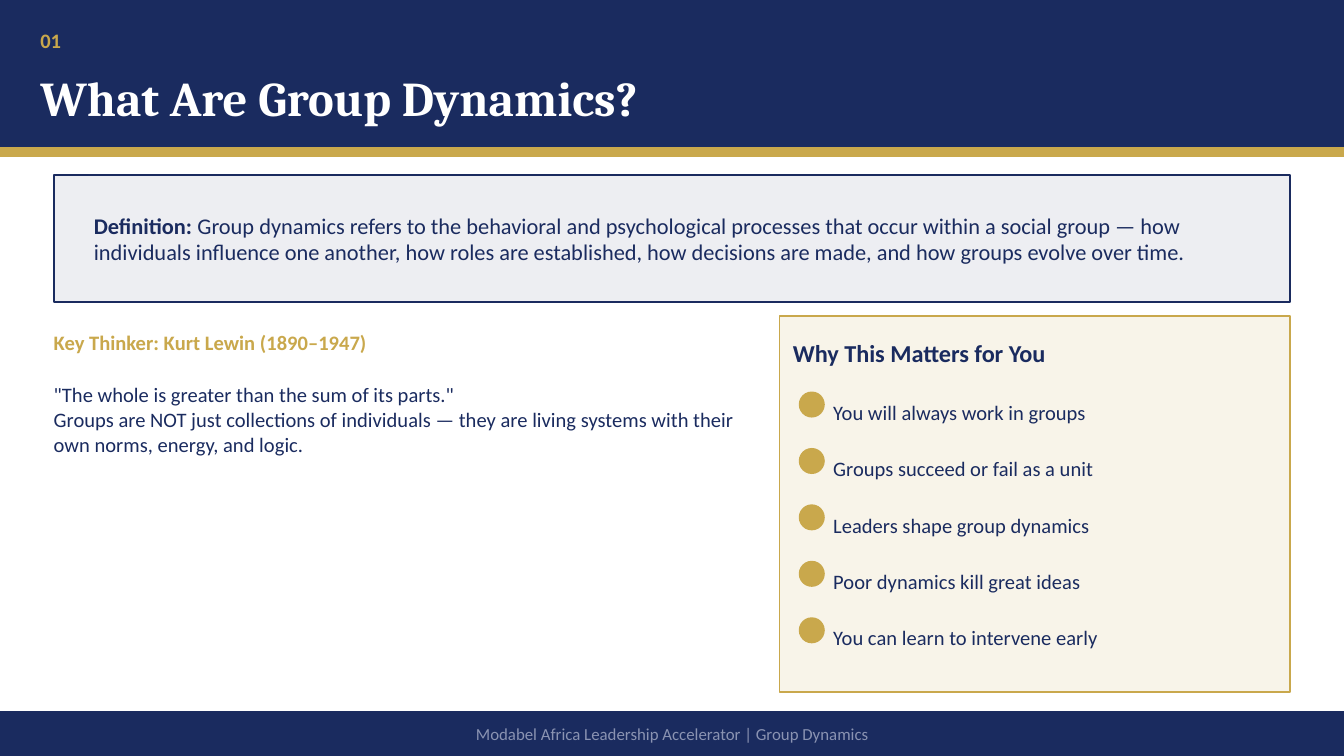
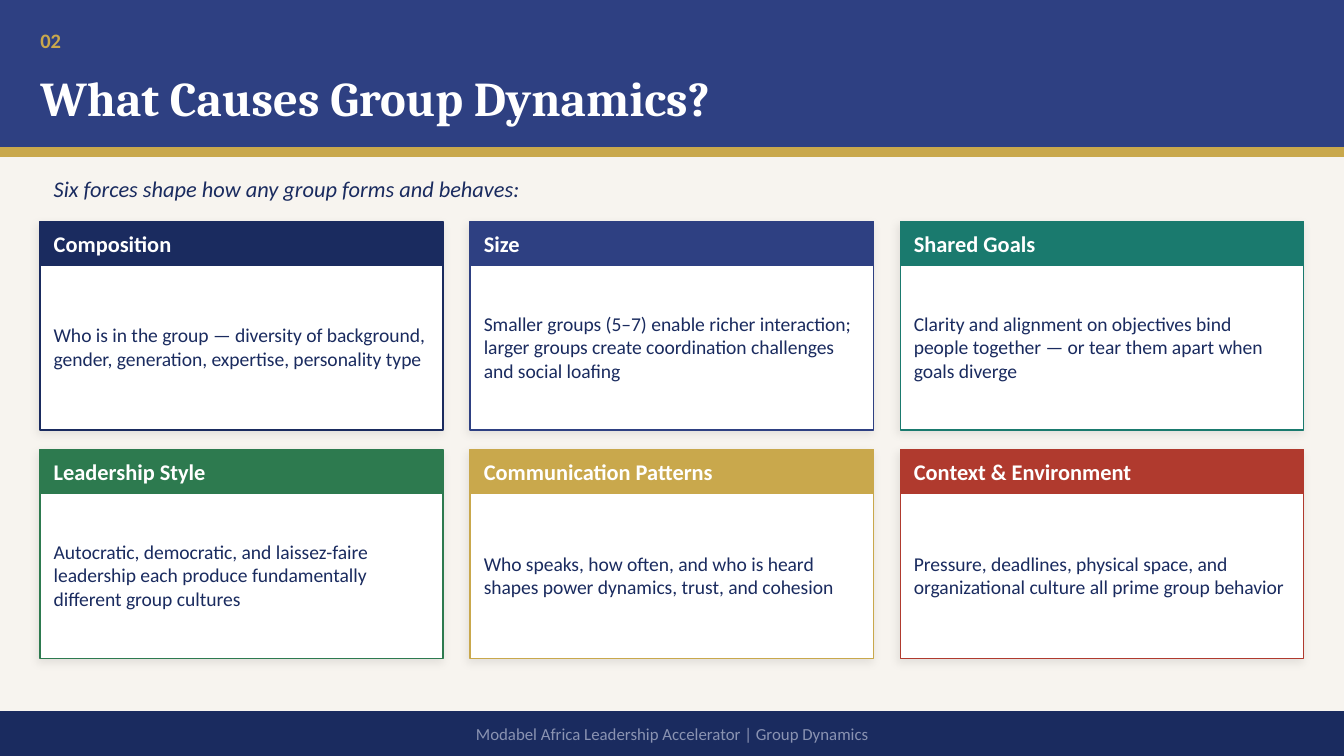
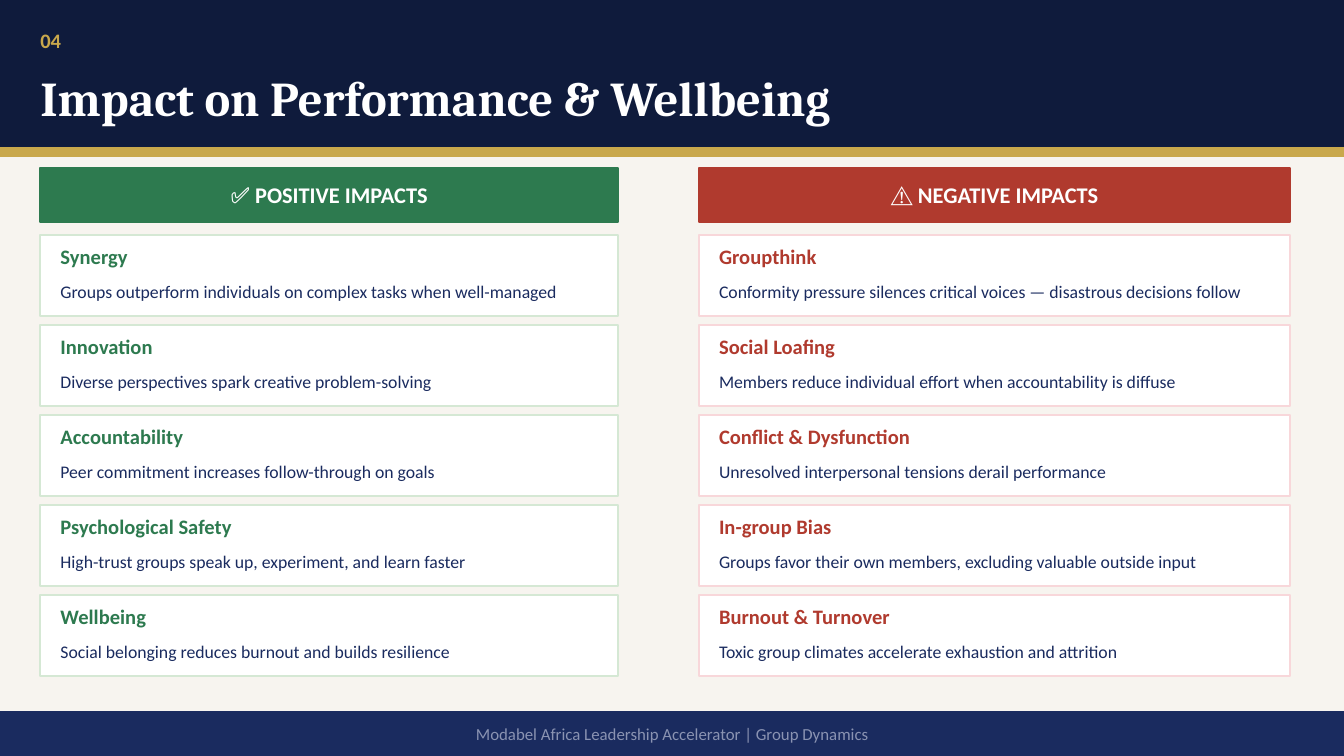
"""Build three slides on group dynamics."""
from dataclasses import dataclass
from typing import NamedTuple

from lxml import etree
from pptx import Presentation
from pptx.dml.color import RGBColor
from pptx.enum.shapes import MSO_SHAPE
from pptx.enum.text import MSO_ANCHOR, MSO_AUTO_SIZE, PP_ALIGN
from pptx.oxml.ns import qn
from pptx.util import Emu, Inches, Pt

RECT, OVAL = MSO_SHAPE.RECTANGLE, MSO_SHAPE.OVAL
MIDDLE, NO_FIT = MSO_ANCHOR.MIDDLE, MSO_AUTO_SIZE.NONE
LEFT, CENTER = PP_ALIGN.LEFT, PP_ALIGN.CENTER

HUES = {
    "navy": "1A2B5F", "blue": "2E4082", "night": "0F1B3C", "gold": "C9A84C",
    "teal": "1A7A6E", "green": "2D7A4F", "red": "B03A2E", "mint": "D5E8D4",
    "pink": "F8D7DA", "white": "FFFFFF", "cream": "F7F4EF", "mist": "8A93B2",
}
FOOTER = "Modabel Africa Leadership Accelerator | Group Dynamics"


class Box(NamedTuple):
    """Left, top, width and height in inches."""
    left: float
    top: float
    wide: float
    high: float

    def place(self) -> list[Emu]:
        return [Inches(side) for side in self]


@dataclass
class Force:
    """A card for one force."""
    head: str
    body: str
    hue: str


@dataclass
class Column:
    """A column of impacts."""
    head: str
    hue: str
    edge: str
    left: float
    wide: float
    span: float
    items: list[tuple[str, str]]


REASONS = [
    "You will always work in groups",
    "Groups succeed or fail as a unit",
    "Leaders shape group dynamics",
    "Poor dynamics kill great ideas",
    "You can learn to intervene early",
]
FORCES = [
    Force("Composition", "Who is in the group — diversity of background, gender, "
          "generation, expertise, personality type", "navy"),
    Force("Size", "Smaller groups (5–7) enable richer interaction; larger groups "
          "create coordination challenges and social loafing", "blue"),
    Force("Shared Goals", "Clarity and alignment on objectives bind people together "
          "— or tear them apart when goals diverge", "teal"),
    Force("Leadership Style", "Autocratic, democratic, and laissez-faire leadership "
          "each produce fundamentally different group cultures", "green"),
    Force("Communication Patterns", "Who speaks, how often, and who is heard shapes "
          "power dynamics, trust, and cohesion", "gold"),
    Force("Context & Environment", "Pressure, deadlines, physical space, and "
          "organizational culture all prime group behavior", "red"),
]
COLUMNS = [
    Column("✅ POSITIVE IMPACTS", "green", "mint", 0.3, 4.3, 4, [
        ("Synergy", "Groups outperform individuals on complex tasks when well-managed"),
        ("Innovation", "Diverse perspectives spark creative problem-solving"),
        ("Accountability", "Peer commitment increases follow-through on goals"),
        ("Psychological Safety", "High-trust groups speak up, experiment, and learn faster"),
        ("Wellbeing", "Social belonging reduces burnout and builds resilience"),
    ]),
    Column("⚠️ NEGATIVE IMPACTS", "red", "pink", 5.2, 4.4, 4.05, [
        ("Groupthink", "Conformity pressure silences critical voices — disastrous decisions follow"),
        ("Social Loafing", "Members reduce individual effort when accountability is diffuse"),
        ("Conflict & Dysfunction", "Unresolved interpersonal tensions derail performance"),
        ("In-group Bias", "Groups favor their own members, excluding valuable outside input"),
        ("Burnout & Turnover", "Toxic group climates accelerate exhaustion and attrition"),
    ]),
]


def tint(name: str) -> RGBColor:
    """Look up a colour."""
    return RGBColor.from_string(HUES[name])


def write(slide, box: Box, text: str, *, size: float = 11, hue: str = "navy",
          font: str = "Calibri", bold: bool = False, slant: bool = False,
          align=LEFT, lead: str = "", inset: tuple[float, float] = (0, 0),
          holder=None) -> None:
    """Write text, one paragraph a line, in a new box or a given holder."""
    holder = holder or slide.shapes.add_textbox(*box.place())
    holder.left, holder.top, holder.width, holder.height = box.place()
    frame = holder.text_frame
    frame.word_wrap, frame.auto_size = True, NO_FIT
    frame.vertical_anchor = MIDDLE
    frame.margin_left = frame.margin_right = Inches(inset[0])
    frame.margin_top = frame.margin_bottom = Inches(inset[1])
    for index, line in enumerate(text.split("\n")):
        para = frame.add_paragraph() if index else frame.paragraphs[0]
        para.alignment = align
        parts = [(line, bold)]
        if lead and not index:
            parts.insert(0, (lead, True))
        for words, heavy in parts:
            run = para.add_run()
            run.text = words
            run.font.size, run.font.name = Pt(size), font
            run.font.bold, run.font.italic = heavy, slant
            run.font.color.rgb = tint(hue)


def fade(color, share: int) -> None:
    """Give a colour element an opacity in percent."""
    etree.SubElement(color, qn("a:alpha"), val=str(share * 1000))


def draw(slide, box: Box, fill: str, *, edge: str = "", kind=RECT,
         share: int = 100, lift: bool = False) -> None:
    """Draw a filled shape with a one-point edge."""
    shape = slide.shapes.add_shape(kind, *box.place())
    shape.shadow.inherit = False
    shape.fill.solid()
    shape.fill.fore_color.rgb = tint(fill)
    shape.line.color.rgb = tint(edge or fill)
    shape.line.width = Pt(1)
    props = shape.element.spPr
    if share < 100:
        fade(props.find(qn("a:solidFill"))[0], share)
    if lift:
        glow = etree.SubElement(
            props.find(qn("a:effectLst")), qn("a:outerShdw"), blurRad=str(Pt(5)),
            dist=str(Pt(2)), dir=str(135 * 60000), algn="bl", rotWithShape="0")
        fade(etree.SubElement(glow, qn("a:srgbClr"), val="000000"), 8)


def start(deck, mark: str, title: str, band: str, ground: str):
    """Add a slide with its header and footer."""
    slide = deck.slides.add_slide(deck.slide_layouts[5])
    slide.background.fill.solid()
    slide.background.fill.fore_color.rgb = tint(ground)
    draw(slide, Box(0, 0, 10, 1.1), band)
    draw(slide, Box(0, 1.1, 10, 0.06), "gold")
    write(slide, Box(0.3, 0.1, 0.6, 0.4), mark, hue="gold", bold=True)
    holder = slide.shapes.title
    holder.element.getparent().append(holder.element)
    write(slide, Box(0.3, 0.45, 9, 0.55), title, size=26, hue="white",
          font="Cambria", bold=True, holder=holder)
    foot = Box(0, 5.3, 10, 0.32)
    draw(slide, foot, "navy")
    write(slide, foot, FOOTER, size=9, hue="mist", align=CENTER)
    return slide


def define(deck) -> None:
    """Build the definition slide."""
    slide = start(deck, "01", "What Are Group Dynamics?", "navy", "white")
    draw(slide, Box(0.4, 1.3, 9.2, 0.95), "navy", share=8)
    write(slide, Box(0.6, 1.35, 8.8, 0.85),
          "Group dynamics refers to the behavioral and psychological processes that "
          "occur within a social group — how individuals influence one another, how "
          "roles are established, how decisions are made, and how groups evolve over time.",
          size=12, lead="Definition: ", inset=(0.1, 0.05))
    write(slide, Box(0.4, 2.4, 5, 0.3), "Key Thinker: Kurt Lewin (1890–1947)",
          hue="gold", bold=True)
    write(slide, Box(0.4, 2.72, 5.2, 0.8),
          '"The whole is greater than the sum of its parts."\n'
          "Groups are NOT just collections of individuals — they are living systems "
          "with their own norms, energy, and logic.")
    draw(slide, Box(5.8, 2.35, 3.8, 2.8), "gold", share=12)
    write(slide, Box(5.9, 2.45, 3.5, 0.35), "Why This Matters for You", size=13, bold=True)
    for row, reason in enumerate(REASONS):
        top = 2.89 + row * 0.42
        draw(slide, Box(5.95, top + 0.03, 0.18, 0.18), "gold", kind=OVAL)
        write(slide, Box(6.2, top, 3.2, 0.35), reason)


def explain(deck) -> None:
    """Build the slide of six forces."""
    slide = start(deck, "02", "What Causes Group Dynamics?", "blue", "cream")
    write(slide, Box(0.4, 1.25, 9, 0.3),
          "Six forces shape how any group forms and behaves:", size=12, slant=True)
    for index, force in enumerate(FORCES):
        row, col = divmod(index, 3)
        left, top = 0.3 + col * 3.2, 1.65 + row * 1.7
        draw(slide, Box(left, top, 3, 1.55), "white", edge=force.hue, lift=True)
        draw(slide, Box(left, top, 3, 0.32), force.hue)
        write(slide, Box(left + 0.1, top, 2.8, 0.32), force.head,
              size=12, hue="white", bold=True)
        write(slide, Box(left + 0.1, top + 0.38, 2.8, 1.1), force.body, size=10.5)


def compare(deck) -> None:
    """Build the slide of impacts."""
    slide = start(deck, "04", "Impact on Performance & Wellbeing", "night", "cream")
    for column in COLUMNS:
        banner = Box(column.left, 1.25, column.wide, 0.4)
        draw(slide, banner, column.hue)
        write(slide, banner, column.head, size=12, hue="white", bold=True, align=CENTER)
        inner = column.left + 0.15
        for row, (name, note) in enumerate(column.items):
            top = 1.75 + row * 0.67
            draw(slide, Box(column.left, top, column.wide, 0.6), "white", edge=column.edge)
            write(slide, Box(inner, top + 0.03, column.span, 0.25), name,
                  hue=column.hue, bold=True)
            write(slide, Box(inner, top + 0.28, column.span, 0.28), note, size=9.5)


def main() -> None:
    """Build and save the deck."""
    deck = Presentation()
    deck.slide_width, deck.slide_height = Inches(10), Inches(10 * 9 / 16)
    define(deck)
    explain(deck)
    compare(deck)
    deck.save("out.pptx")


if __name__ == "__main__":
    main()
